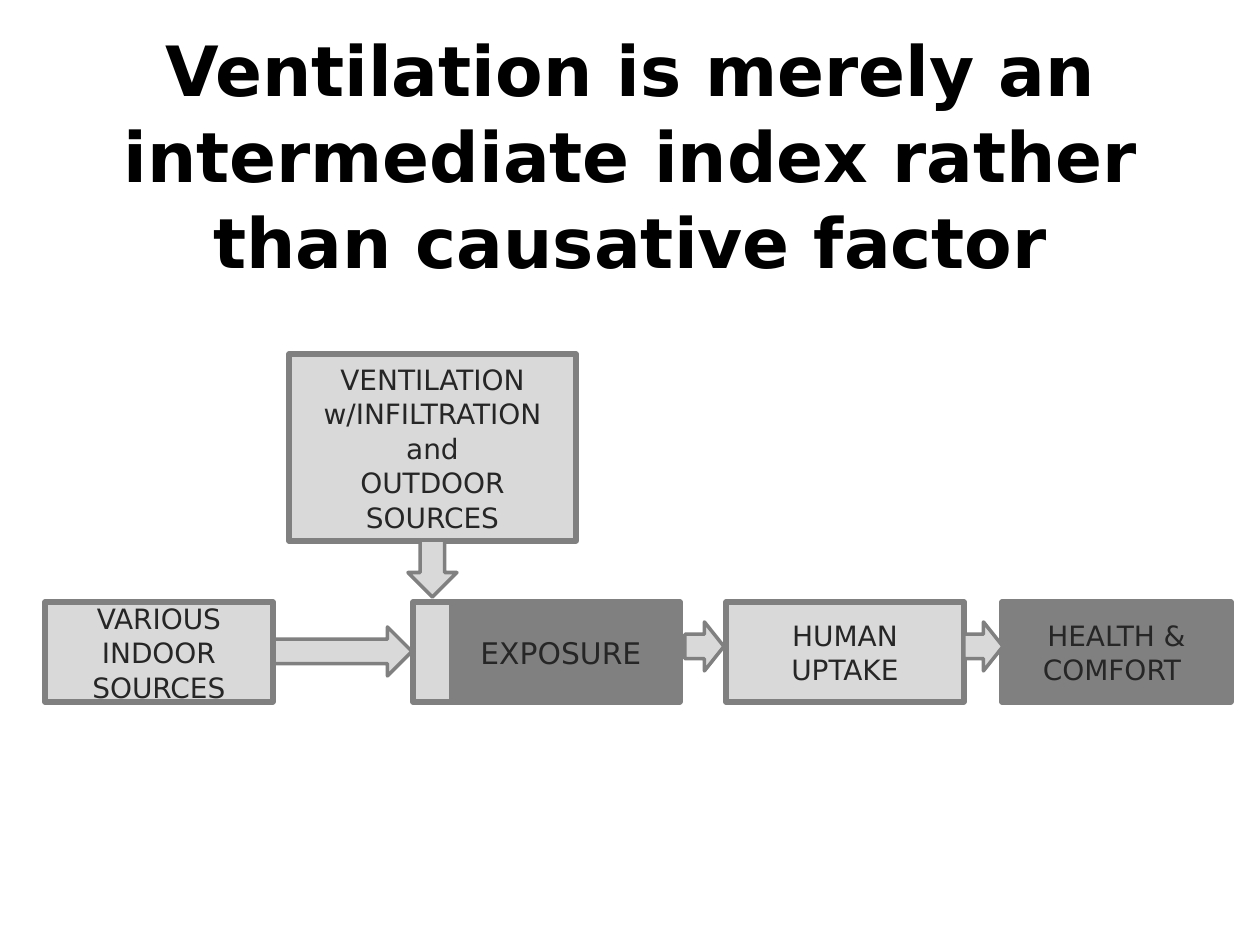
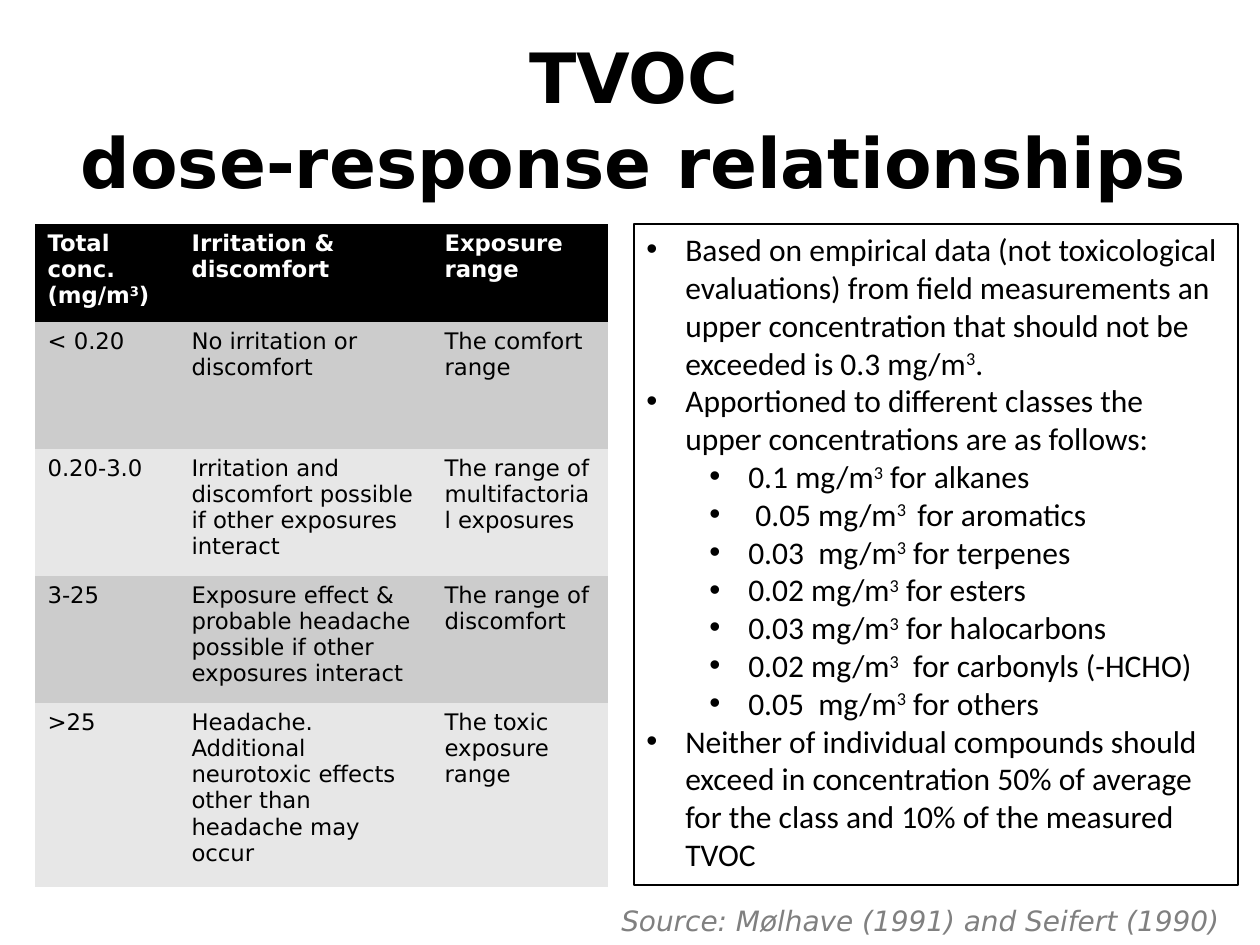
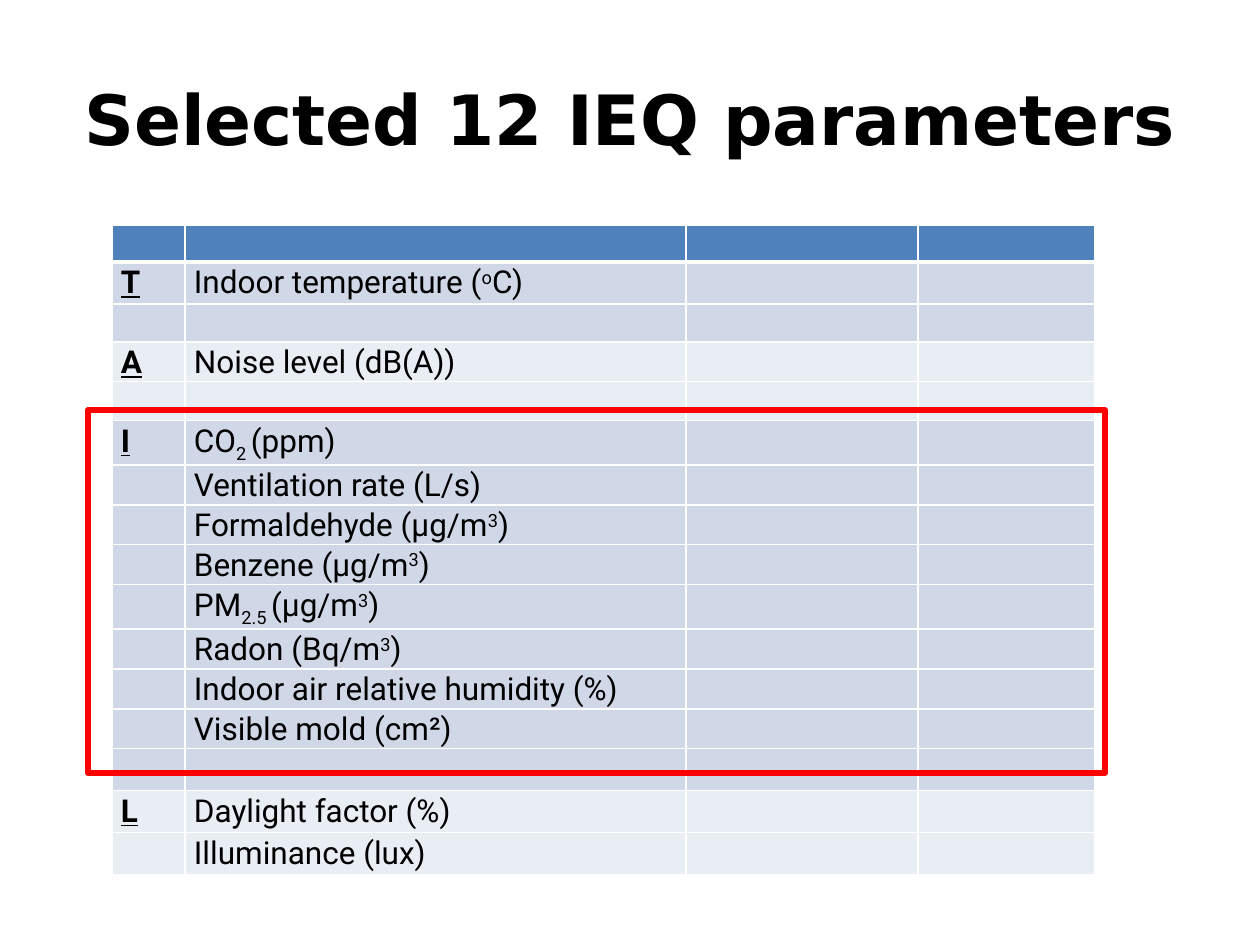
from itertools import accumulate
from pptx import Presentation
from pptx import util as u
from pptx.dml.color import RGBColor
from pptx.enum import shapes, text
from pptx.oxml import parse_xml
from pptx.oxml.ns import nsdecls

PX = 914400 // 126
SANS, BODY, GRID = "DejaVu Sans", "Calibri", "Roboto"
BLACK, WHITE, RED, INK = "000000", "FFFFFF", "FF0000", "262626"
PALE, GRAY = "D9D9D9", "808080"
RECT, ARROW = shapes.MSO_SHAPE.RECTANGLE, shapes.MSO_SHAPE.RIGHT_ARROW
MID, TOP = text.MSO_ANCHOR.MIDDLE, text.MSO_ANCHOR.TOP
LEFT, CENTER = text.PP_ALIGN.LEFT, text.PP_ALIGN.CENTER
PLAIN = "{2D5ABB26-0587-4C30-8999-92F81FD0307C}"

TITLES = [
    ("Ventilation is merely an intermediate index rather than causative factor",
     (29, 26, 1203, 255)),
    ("TVOC|<br>|dose-response relationships", (34, 38, 1200, 158)),
    ("Selected 12 IEQ parameters", (63, 38, 1134, 158)),
]

ROW_Y, ROW_H, HEAD = 602, 100, 49
FLOW = [
    (ARROW, (273, 627, 139, HEAD), PALE, 2, [], 16, 0),
    (RECT, (45, ROW_Y, 228, ROW_H), PALE, 3, ["VARIOUS|<br>|INDOOR SOURCES"], 16, 0),
    (RECT, (289, 354, 287, 187), PALE, 3,
     ["VENTILATION", "w/INFILTRATION and", "OUTDOOR SOURCES"], 16, 0),
    (ARROW, (404, 544, 57, HEAD), PALE, 2, [], 16, 90),
    (RECT, (442, ROW_Y, 238, ROW_H), GRAY, 3, ["EXPOSURE"], 17, 0),
    (RECT, (1002, ROW_Y, 229, ROW_H), GRAY, 3, ["HEALTH & COMFORT "], 16, 0),
    (ARROW, (685, 622, 39, HEAD), PALE, 2, [], 16, 0),
    (RECT, (726, ROW_Y, 238, ROW_H), PALE, 3, ["HUMAN UPTAKE"], 16, 0),
    (ARROW, (964, 622, 39, HEAD), PALE, 2, [], 16, 0),
    (RECT, (413, ROW_Y, 39, ROW_H), PALE, 3, [], 16, 0),
]

DOSE_COLS, DOSE_ROWS = [144, 253, 176], [98, 127, 127, 127, 184]
DOSE = [
    ("Total conc. (mg/m|^3|)", "Irritation & discomfort", "Exposure range"),
    ("< 0.20", "No irritation or discomfort", "The comfort range"),
    ("0.20-3.0", "Irritation and discomfort possible if other exposures interact",
     "The range of multifactorial exposures"),
    ("3-25", "Exposure effect & probable headache possible if other exposures interact",
     "The range of discomfort"),
    (">25", "Headache. Additional neurotoxic effects other than headache may occur",
     "The toxic exposure range"),
]
SOURCE = "Source: Mølhave (1991) and Seifert (1990)"
NOTES = [
    (0, "Based on empirical data (not toxicological evaluations) from field measurements "
        "an upper concentration that should not be exceeded is 0.3 mg/m|^3|."),
    (0, "Apportioned to different classes the upper concentrations are as follows:"),
    (1, "0.1 mg/m|^3| for alkanes"),
    (1, " 0.05 mg/m|^3 | for aromatics"),
    (1, "0.03  mg/m|^3| for terpenes"),
    (1, "0.02 mg/m|^3| for esters"),
    (1, "0.03 mg/m|^3| for halocarbons"),
    (1, "0.02 mg/m|^3|  for carbonyls (-HCHO)"),
    (1, "0.05  mg/m|^3| for others"),
    (0, "Neither of individual compounds should exceed in concentration 50% of average "
        "for the class and 10% of the measured TVOC"),
]

PARAM_COLS = [73, 501, 232, 177]
HEAD_FILL, BANDS = "4F81BD", ("D0D8E8", "E9EDF4")
PARAMS = [
    ("T", [("Indoor temperature (|^o|C)", 42), ("", 38)]),
    ("A", [("Noise level (dB(A))", 39), ("", 39)]),
    ("I", [("CO|_2 |(ppm)", 44), ("Ventilation rate (L/s)", 40),
           ("Formaldehyde (µg/m|^3|)", 39), ("Benzene (µg/m|^3|)", 40),
           ("PM|_2.5 |(µg/m|^3|)", 44), ("Radon (Bq/m|^3|)", 40),
           ("Indoor air relative humidity (%)", 40), ("Visible mold (cm²)", 39),
           ("", 42)]),
    ("L", [("Daylight factor (%)", 42), ("Illuminance (lux)", 42)]),
]


def tint(hue):
    return RGBColor.from_string(hue)


def put(item, **vals):
    for key, val in vals.items():
        setattr(item, key, val)


def box(at):
    return [n * PX for n in at]


def paint(item, hue):
    item.fill.solid()
    item.fill.fore_color.rgb = tint(hue)


def write(par, words, size, face, hue, **style):
    if not words:
        par._p.get_or_add_endParaRPr().set("sz", "1200")
        return
    for part in words.split("|"):
        if part == "<br>":
            par.add_line_break()
            continue
        shift = {"^": "30000", "_": "-25000"}.get(part[0])
        run = par.add_run()
        run.text = part[1:] if shift else part
        put(run.font, size=u.Pt(size), name=face, **style)
        run.font.color.rgb = tint(hue)
        if shift:
            run._r.get_or_add_rPr().set("baseline", shift)


def lines(frame, rows, size, face, hue, anchor=TOP, align=LEFT, gap=None, **style):
    put(frame, word_wrap=True, vertical_anchor=anchor, auto_size=text.MSO_AUTO_SIZE.NONE)
    for i, words in enumerate(rows):
        par = frame.add_paragraph() if i else frame.paragraphs[0]
        put(par, alignment=align, line_spacing=gap)
        write(par, words, size, face, hue, **style)


def shape(slide, kind, at, fill, edge, width):
    item = slide.shapes.add_shape(kind, *box(at))
    item.shadow.inherit = False
    if fill:
        paint(item, fill)
    else:
        item.fill.background()
    item.line.color.rgb = tint(edge)
    item.line.width = u.Pt(width)
    return item


def grid(slide, left, top, cols, rows):
    frame = slide.shapes.add_table(len(rows), len(cols),
                                   *box((left, top, sum(cols), sum(rows))))
    table = frame.table
    table._tbl.tblPr.find("{*}tableStyleId").text = PLAIN
    for col, wide in zip(table.columns, cols):
        col.width = wide * PX
    for row, high in zip(table.rows, rows):
        row.height = high * PX
    return table


def rule(cell, base):
    props = cell._tc.get_or_add_tcPr()
    widths = {"lnL": 1, "lnR": 1, "lnT": 1, "lnB": base}
    for i, (tag, wide) in enumerate(widths.items()):
        props.insert(i, parse_xml(
            f'<a:{tag} {nsdecls("a")} w="{wide * 12700}"><a:solidFill>'
            f'<a:srgbClr val="{WHITE}"/></a:solidFill></a:{tag}>'))


def bullet(par, level):
    props = par._p.get_or_add_pPr()
    props.set("marL", str((39 + 63 * level) * PX))
    props.set("indent", str(-39 * PX))
    props.append(parse_xml(f'<a:buFont {nsdecls("a")} typeface="Arial"/>'))
    props.append(parse_xml(f'<a:buChar {nsdecls("a")} char="•"/>'))


def start(deck, title, at):
    slide = deck.slides.add_slide(deck.slide_layouts[5])
    head = slide.shapes.title
    put(head, **dict(zip(("left", "top", "width", "height"), box(at))))
    lines(head.text_frame, [title], 39.6, SANS, BLACK, MID, CENTER, 1.03, bold=True)
    return slide


def flow(slide):
    for kind, at, fill, width, rows, size, turn in FLOW:
        item = shape(slide, kind, at, fill, GRAY, width)
        item.rotation = turn
        if rows:
            lines(item.text_frame, rows, size, SANS, INK, MID, CENTER, 1.03)


def dose(slide):
    table = grid(slide, 35, 224, DOSE_COLS, DOSE_ROWS)
    for r, row in enumerate(DOSE):
        fill = ("E7E7E7", "CCCCCC")[r % 2] if r else BLACK
        for c, words in enumerate(row):
            cell = table.cell(r, c)
            paint(cell, fill)
            write(cell.text_frame.paragraphs[0], words, 13, SANS,
                  BLACK if r else WHITE, bold=not r)
    foot = slide.shapes.add_textbox(*box((609, 897, 644, 47)))
    lines(foot.text_frame, [SOURCE], 16, SANS, GRAY, italic=True)
    panel = shape(slide, RECT, (634, 224, 604, 661), None, BLACK, 1)
    lines(panel.text_frame, [words for _, words in NOTES], 18, BODY, BLACK)
    for par, (level, _) in zip(panel.text_frame.paragraphs, NOTES):
        par.level = level
        bullet(par, level)


def params(slide):
    rows = [("", "", HEAD_FILL, 37)]
    for g, (mark, items) in enumerate(PARAMS):
        for i, (words, high) in enumerate(items):
            rows.append(("" if i else mark, words, BANDS[g % 2], high))
    table = grid(slide, 112, 225, PARAM_COLS, [row[3] for row in rows])
    for r, (mark, words, fill, _) in enumerate(rows):
        for c, entry in enumerate((mark, words, "", "")):
            cell = table.cell(r, c)
            put(cell, margin_left=9 * PX, margin_right=9 * PX,
                margin_top=0, margin_bottom=0)
            paint(cell, fill)
            rule(cell, 1 if r else 3)
            par = cell.text_frame.paragraphs[0]
            put(par, alignment=text.PP_ALIGN.JUSTIFY, line_spacing=1.07)
            write(par, entry, 18, GRID, BLACK, bold=c == 0, underline=c == 0)
    shape(slide, RECT, (88, 410, 1017, 363), None, RED, 3.5)


def main():
    deck = Presentation()
    put(deck, slide_width=1260 * PX, slide_height=945 * PX)
    for (title, at), draw in zip(TITLES, (flow, dose, params)):
        draw(start(deck, title, at))
    deck.save("out.pptx")


if __name__ == "__main__":
    main()
